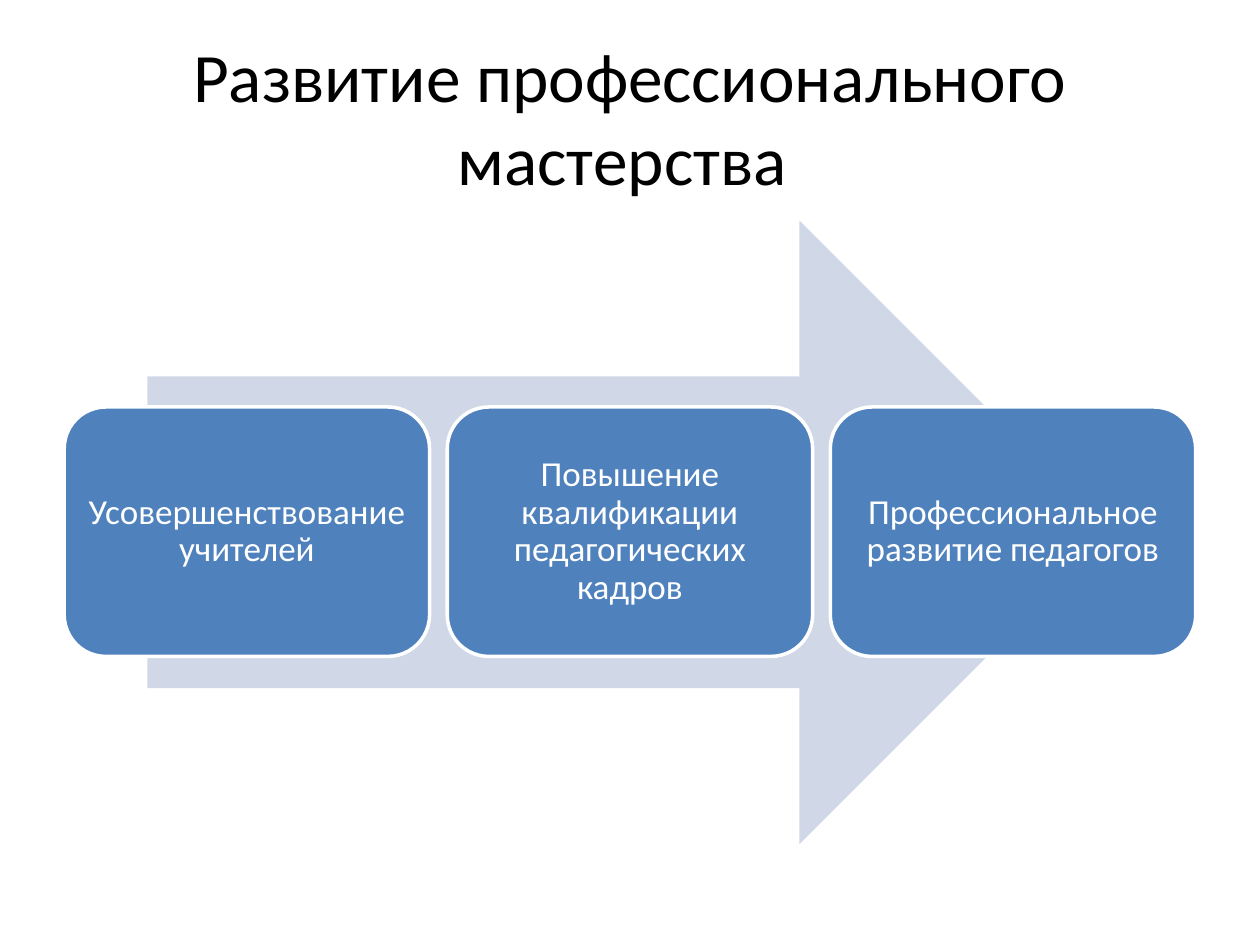
from dataclasses import dataclass

from pptx import Presentation
from pptx.dml.color import RGBColor
from pptx.enum.shapes import MSO_SHAPE
from pptx.enum.text import MSO_ANCHOR, PP_ALIGN
from pptx.shapes.autoshape import Shape
from pptx.slide import Slide
from pptx.text.text import TextFrame
from pptx.util import Inches, Pt

BLACK = RGBColor(0x00, 0x00, 0x00)
WHITE = RGBColor(0xFF, 0xFF, 0xFF)
BLUE = RGBColor(0x4F, 0x81, 0xBD)
PALE_BLUE = RGBColor(0xD0, 0xD8, 0xE8)

STAGE_LEFT = 0.51
STAGE_TOP = 3.23
STAGE_WIDTH = 2.9
STAGE_HEIGHT = 1.98
STAGE_GAP = 0.14


@dataclass
class Stage:
    text: str
    left: float


def write_text(frame: TextFrame, text: str, size: float, color: RGBColor) -> None:
    frame.word_wrap = True
    frame.vertical_anchor = MSO_ANCHOR.MIDDLE
    frame.text = text
    para = frame.paragraphs[0]
    para.alignment = PP_ALIGN.CENTER
    para.font.name = "Calibri"
    para.font.size = Pt(size)
    para.font.color.rgb = color


def add_title(page: Slide, text: str) -> None:
    title = page.shapes.title
    title.left, title.top = Inches(0.5), Inches(0.3)
    title.width, title.height = Inches(9), Inches(1.25)
    write_text(title.text_frame, text, 39.6, BLACK)


def add_filled_shape(page: Slide, kind: MSO_SHAPE, left: float, top: float,
                     width: float, height: float, color: RGBColor) -> Shape:
    shape = page.shapes.add_shape(
        kind, Inches(left), Inches(top), Inches(width), Inches(height))
    shape.shadow.inherit = False
    shape.fill.solid()
    shape.fill.fore_color.rgb = color
    return shape


def add_arrow(page: Slide) -> None:
    arrow = add_filled_shape(
        page, MSO_SHAPE.RIGHT_ARROW, 1.17, 1.75, 7.65, 4.95, PALE_BLUE)
    arrow.line.fill.background()


def add_stage(page: Slide, stage: Stage) -> None:
    box = add_filled_shape(page, MSO_SHAPE.ROUNDED_RECTANGLE, stage.left,
                           STAGE_TOP, STAGE_WIDTH, STAGE_HEIGHT, BLUE)
    box.line.color.rgb = WHITE
    box.line.width = Pt(2)
    frame = box.text_frame
    frame.margin_left = frame.margin_right = Inches(0.08)
    frame.margin_top = frame.margin_bottom = Inches(0.08)
    write_text(frame, stage.text, 20, WHITE)
    frame.paragraphs[0].line_spacing = 0.9


def main() -> None:
    deck = Presentation()
    deck.slide_width, deck.slide_height = Inches(10), Inches(7.5)
    page = deck.slides.add_slide(deck.slide_layouts.get_by_name("Title Only"))
    add_title(page, "Развитие профессионального мастерства ")
    add_arrow(page)
    stage_texts = [
        "Усовершенствование учителей",
        "Повышение квалификации педагогических кадров",
        "Профессиональное развитие педагогов",
    ]
    for index, text in enumerate(stage_texts):
        left = STAGE_LEFT + index * (STAGE_WIDTH + STAGE_GAP)
        add_stage(page, Stage(text, left))
    deck.save("out.pptx")


if __name__ == "__main__":
    main()
